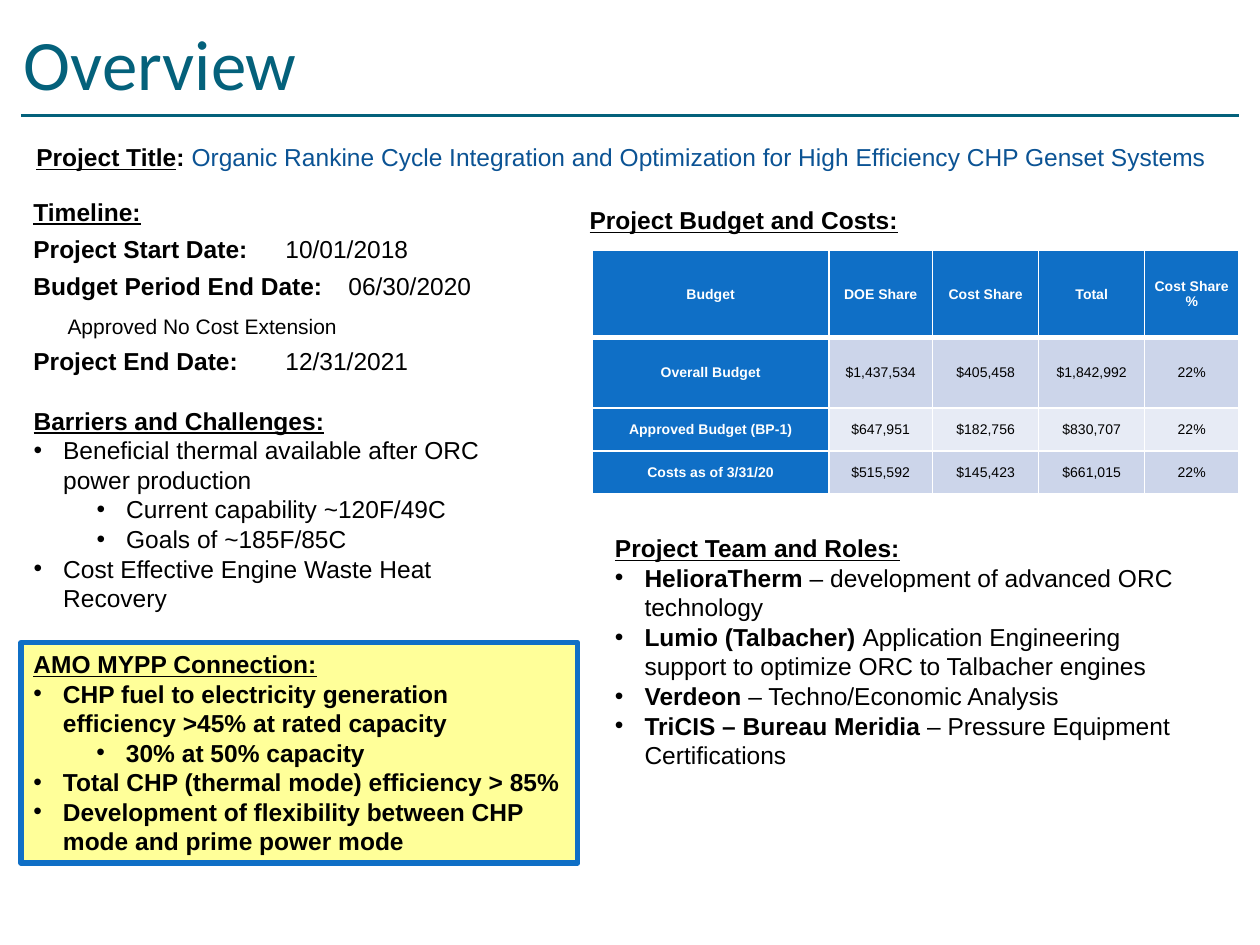
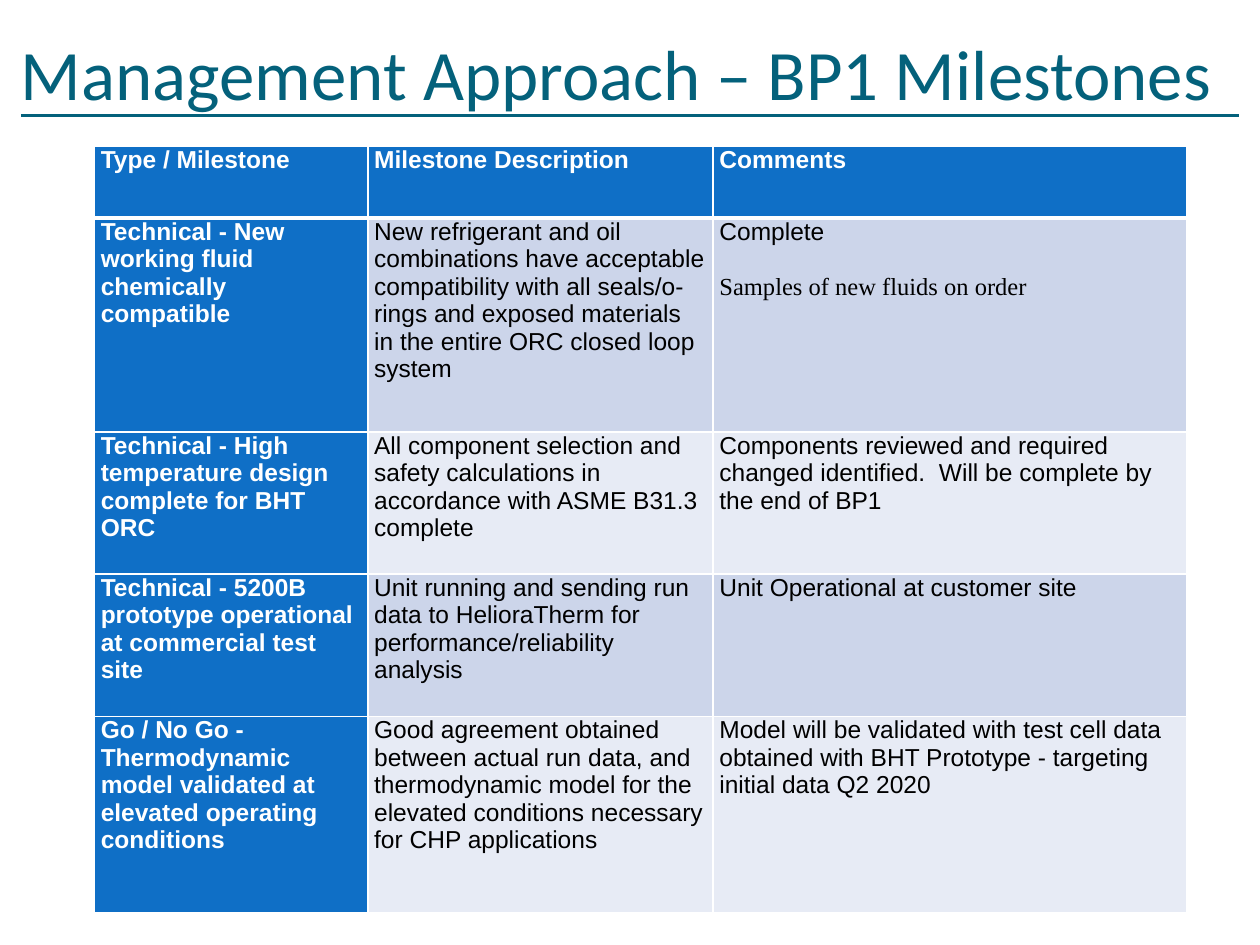
from dataclasses import dataclass

from pptx import Presentation
from pptx.dml.color import RGBColor
from pptx.enum.shapes import MSO_CONNECTOR as Connector, MSO_SHAPE as Shape
from pptx.enum.text import MSO_ANCHOR as Anchor, MSO_AUTO_SIZE as AutoSize, PP_ALIGN as Align
from pptx.oxml.ns import qn
from pptx.util import Pt
from lxml.etree import SubElement

COLORS = {
    "title": "04617B",
    "blue": "0F6FC6",
    "project": "0B5394",
    "highlight": "FFFF99",
    "band_dark": "CCD5EA",
    "band_light": "E7EBF5",
    "text": "000000",
    "white": "FFFFFF",
}
TITLE_FONT = "Calibri"
BODY_FONT = "Arial"
BODY_SIZE = 14
BODY_LINE = 16.9
TABLE_LINE = 15.7
HANG = 16.9
LEVEL_STEP = 36
DATE_TAB = 189
TITLE_ONLY, TWO_CONTENT = 5, 3


@dataclass
class Line:
    runs: list
    level: int = 0
    bullet: bool = False
    size: float = BODY_SIZE
    bold: bool = False
    underline: bool = False
    indent: float = 0


def color(name):
    return RGBColor.from_string(COLORS[name])


def heading(text):
    return Line([text], bold=True, underline=True)


def bullet(*runs, level=0, bold=False):
    return Line(list(runs), level, True, bold=bold)


def set_font(font, size, color_name, bold=False, name=BODY_FONT):
    font.name = name
    font.size = Pt(size)
    font.bold = bold
    font.color.rgb = color(color_name)


def set_indent(paragraph, line):
    properties = paragraph._p.get_or_add_pPr()
    margin = HANG + line.level * LEVEL_STEP if line.bullet else line.indent
    properties.set("marL", str(Pt(margin)))
    properties.set("indent", str(Pt(-HANG if line.bullet else 0)))
    if line.bullet:
        SubElement(properties, qn("a:buFont")).set("typeface", BODY_FONT)
        SubElement(properties, qn("a:buChar")).set("char", "•")
    else:
        SubElement(properties, qn("a:buNone"))


def add_date_tab(paragraph):
    tabs = SubElement(paragraph._p.get_or_add_pPr(), qn("a:tabLst"))
    tab = SubElement(tabs, qn("a:tab"))
    tab.set("pos", str(Pt(DATE_TAB)))
    tab.set("algn", "l")


def write_lines(frame, lines, space_after=0):
    frame.word_wrap = True
    frame.auto_size = AutoSize.NONE
    frame.vertical_anchor = Anchor.TOP
    for number, line in enumerate(lines):
        paragraph = frame.add_paragraph() if number else frame.paragraphs[0]
        paragraph.alignment = Align.LEFT
        paragraph.level = line.level
        paragraph.line_spacing = Pt(BODY_LINE)
        paragraph.space_before = Pt(0)
        paragraph.space_after = Pt(space_after)
        set_indent(paragraph, line)
        set_font(paragraph.font, line.size, "text", line.bold)
        paragraph.font.underline = line.underline
        for item in line.runs:
            text, changes = (item, {}) if isinstance(item, str) else item
            run = paragraph.add_run()
            run.text = text
            for attribute, value in changes.items():
                if attribute == "color":
                    run.font.color.rgb = color(value)
                else:
                    setattr(run.font, attribute, value)


def place(shape, left, top, width, height):
    shape.left, shape.top = Pt(left), Pt(top)
    shape.width, shape.height = Pt(width), Pt(height)


def add_text(slide, box, lines, space_after=0):
    shape = slide.shapes.add_textbox(*map(Pt, box))
    write_lines(shape.text_frame, lines, space_after)
    return shape


def fill_list(slide, index, box, lines):
    placeholder = slide.placeholders[index]
    place(placeholder, *box)
    write_lines(placeholder.text_frame, lines)


def add_highlight(slide, box, lines):
    shape = slide.shapes.add_shape(Shape.RECTANGLE, *map(Pt, box))
    shape.shadow.inherit = False
    shape.fill.solid()
    shape.fill.fore_color.rgb = color("highlight")
    shape.line.color.rgb = color("blue")
    shape.line.width = Pt(3)
    write_lines(shape.text_frame, lines)


def add_slide(presentation, layout, title, title_box):
    slide = presentation.slides.add_slide(presentation.slide_layouts[layout])
    rule = slide.shapes.add_connector(Connector.STRAIGHT, Pt(12), Pt(66), Pt(708), Pt(66))
    rule.line.color.rgb = color("title")
    rule.line.width = Pt(2.25)
    SubElement(rule._element.spPr, qn("a:effectLst"))

    place(slide.shapes.title, *title_box)
    frame = slide.shapes.title.text_frame
    frame.text = title
    frame.auto_size = AutoSize.NONE
    frame.vertical_anchor = Anchor.BOTTOM
    frame.margin_left = frame.margin_right = frame.margin_bottom = 0
    frame.margin_top = Pt(3.6)
    paragraph = frame.paragraphs[0]
    paragraph.alignment = Align.LEFT
    set_font(paragraph.font, 40.5, "title", name=TITLE_FONT)
    return slide


def set_borders(cell, row):
    properties = cell._tc.get_or_add_tcPr()
    widths = {"L": 1, "R": 1, "T": 3 if row == 1 else 1, "B": 3 if row == 0 else 1}
    for side, width in widths.items():
        border = SubElement(properties, qn(f"a:ln{side}"))
        border.set("w", str(Pt(width)))
        fill = SubElement(border, qn("a:solidFill"))
        SubElement(fill, qn("a:srgbClr")).set("val", COLORS["white"])


def add_table(slide, left, top, widths, heights, rows, size, margin, align, anchor, spacing=None):
    frame = slide.shapes.add_table(
        len(rows), len(widths), Pt(left), Pt(top), Pt(sum(widths)), Pt(sum(heights)))
    table = frame.table
    for column, width in zip(table.columns, widths):
        column.width = Pt(width)
    for table_row, height in zip(table.rows, heights):
        table_row.height = Pt(height)
    for row, texts in enumerate(rows):
        for column, text in enumerate(texts):
            cell = table.cell(row, column)
            is_header = row == 0 or column == 0
            band = "band_dark" if row % 2 else "band_light"
            set_borders(cell, row)
            cell.fill.solid()
            cell.fill.fore_color.rgb = color("blue" if is_header else band)
            cell.margin_left = cell.margin_right = Pt(margin)
            cell.margin_top = cell.margin_bottom = 0
            cell.vertical_anchor = anchor
            cell.text = text
            for paragraph in cell.text_frame.paragraphs:
                paragraph.alignment = align
                paragraph.line_spacing = spacing
                set_font(paragraph.font, size, "white" if is_header else "text", is_header)
    return table


def build_overview(presentation):
    slide = add_slide(presentation, TWO_CONTENT, "Overview", (13.7, 41.8, 486, 18))
    strong, plain = {"bold": True}, {"bold": False}

    add_text(slide, (13.7, 77.8, 700.6, 24.5), [Line([
        ("Project Title", {"bold": True, "underline": True}),
        (": ", strong),
        ("Organic Rankine Cycle Integration and Optimization for High Efficiency CHP Genset Systems",
         {"color": "project"}),
    ])])

    timeline = add_text(slide, (12, 108.7, 298, 112.3), [
        heading("Timeline:"),
        Line([("Project Start Date:", strong), "\t10/01/2018"]),
        Line([("Budget Period End Date:", strong), "\t06/30/2020"]),
        Line(["Approved No Cost Extension"], size=12, indent=19.5),
        Line([("Project End Date:", strong), "\t12/31/2021"]),
    ], space_after=4.5)
    for paragraph in timeline.text_frame.paragraphs:
        add_date_tab(paragraph)

    add_text(slide, (329.8, 113.8, 193.7, 24.5), [heading("Project Budget and Costs:")])
    add_table(
        slide, 338.6, 143.2, [135, 59.4, 60.6, 60.6, 53.8], [49.7, 40.3, 24.5, 24.5],
        [
            ["Budget", "DOE Share", "Cost Share", "Total", "Cost Share %"],
            ["Overall Budget", "$1,437,534", "$405,458", "$1,842,992", "22%"],
            ["Approved Budget (BP-1)", "$647,951", "$182,756", "$830,707", "22%"],
            ["Costs as of 3/31/20", "$515,592", "$145,423", "$661,015", "22%"],
        ],
        8, 4.3, Align.CENTER, Anchor.MIDDLE)

    fill_list(slide, 1, (12, 228.2, 285.8, 159.8), [
        heading("Barriers and Challenges:"),
        bullet("Beneficial thermal available after ORC power production"),
        bullet("Current capability ~120F/49C", level=1),
        bullet("Goals of ~185F/85C", level=1),
        bullet("Cost Effective Engine Waste Heat Recovery"),
    ])
    fill_list(slide, 2, (344.2, 301, 337.7, 143.3), [
        heading("Project Team and Roles:"),
        bullet(("HelioraTherm", strong), " – development of advanced ORC technology"),
        bullet(("Lumio (Talbacher) ", strong),
               "Application Engineering support to optimize ORC to Talbacher engines"),
        bullet(("Verdeon", strong), " – Techno/Economic Analysis"),
        bullet("TriCIS – Bureau Meridia ", ("– Pressure Equipment Certifications", plain), bold=True),
    ])
    add_highlight(slide, (12, 367.2, 318.2, 126), [
        heading("AMO MYPP Connection:"),
        bullet("CHP fuel to electricity generation efficiency >45% at rated capacity", bold=True),
        bullet("30% at 50% capacity", level=1, bold=True),
        bullet("Total CHP (thermal mode) efficiency > 85%", bold=True),
        bullet("Development of flexibility between CHP mode and prime power mode", bold=True),
    ])


def build_milestones(presentation):
    slide = add_slide(presentation, TITLE_ONLY, "Management Approach – BP1 Milestones",
                      (12, 23.8, 696.2, 41.8))
    table = add_table(
        slide, 54, 83.8, [156.2, 197.3, 270.7], [40.8, 122.2, 81.3, 81.3, 112.4],
        [
            ["Type / Milestone", "Milestone Description", "Comments"],
            ["Technical - New working fluid chemically compatible",
             "New refrigerant and oil combinations have acceptable compatibility with all "
             "seals/o-rings and exposed materials in the entire ORC closed loop system",
             "Complete\nSamples of new fluids on order"],
            ["Technical - High temperature design complete for BHT ORC",
             "All component selection and safety calculations in accordance with ASME B31.3 complete",
             "Components reviewed and required changed identified.  Will be complete by the end of BP1"],
            ["Technical - 5200B prototype operational at commercial test site",
             "Unit running and sending run data to HelioraTherm for performance/reliability analysis",
             "Unit Operational at customer site"],
            ["Go / No Go - Thermodynamic model validated at elevated operating conditions",
             "Good agreement obtained between actual run data, and thermodynamic model for the "
             "elevated conditions necessary for CHP applications",
             "Model will be validated with test cell data obtained with BHT Prototype - "
             "targeting initial data Q2 2020"],
        ],
        BODY_SIZE, 3.6, Align.LEFT, Anchor.TOP, Pt(TABLE_LINE))
    samples_note = table.cell(1, 2).text_frame.paragraphs[1]
    samples_note.space_before = Pt(TABLE_LINE)
    samples_note.font.name = "Times New Roman"


def main():
    presentation = Presentation()
    presentation.slide_width, presentation.slide_height = Pt(720), Pt(540)
    build_overview(presentation)
    build_milestones(presentation)
    presentation.save("out.pptx")


if __name__ == "__main__":
    main()
